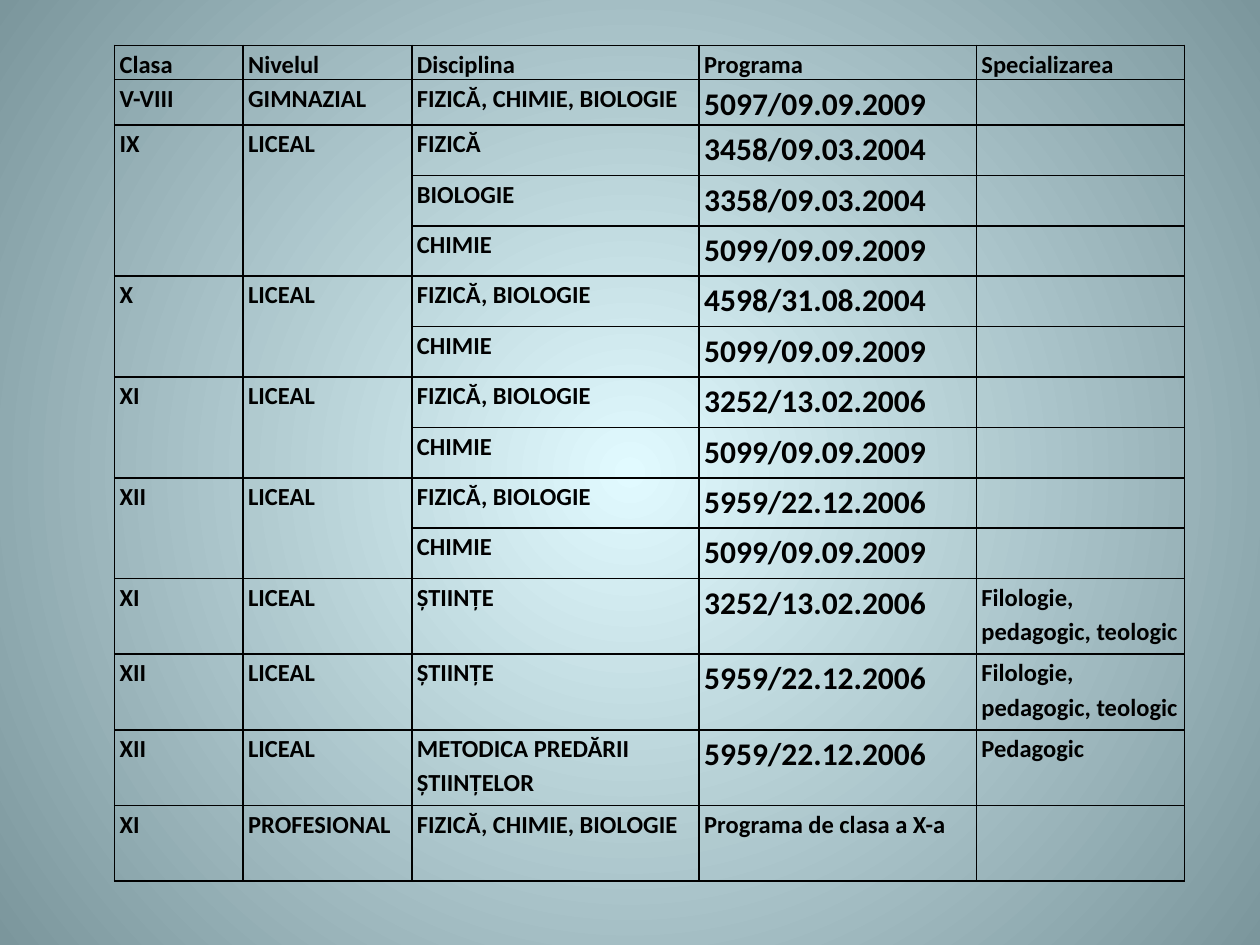
"""Build a slide with the table of science curricula by class and level."""
from lxml.etree import SubElement
from pptx import Presentation
from pptx.dml.color import RGBColor as Color
from pptx.oxml.ns import qn
from pptx.util import Inches, Pt

COLORS = {"center": "E1FAFF", "edge": "7B969C", "ink": "000000"}
COLUMN_WIDTHS = [1.02, 1.34, 2.28, 2.2, 1.65]
ROW_HEIGHTS = [0.21, 0.36] + [0.4] * 9 + [0.6] * 4
ROWS = [
    ("Clasa", "Nivelul", "Disciplina", "Programa", "Specializarea"),
    ("V-VIII", "GIMNAZIAL", "FIZICĂ, CHIMIE, BIOLOGIE", "5097/09.09.2009", ""),
    ("IX", "LICEAL", "FIZICĂ", "3458/09.03.2004", ""),
    ("", "", "BIOLOGIE", "3358/09.03.2004", ""),
    ("", "", "CHIMIE", "5099/09.09.2009", ""),
    ("X", "LICEAL", "FIZICĂ, BIOLOGIE", "4598/31.08.2004", ""),
    ("", "", "CHIMIE", "5099/09.09.2009", ""),
    ("XI", "LICEAL", "FIZICĂ, BIOLOGIE", "3252/13.02.2006", ""),
    ("", "", "CHIMIE", "5099/09.09.2009", ""),
    ("XII", "LICEAL", "FIZICĂ, BIOLOGIE", "5959/22.12.2006", ""),
    ("", "", "CHIMIE", "5099/09.09.2009", ""),
    ("XI", "LICEAL", "ȘTIINȚE", "3252/13.02.2006", "Filologie, pedagogic, teologic"),
    ("XII", "LICEAL", "ȘTIINȚE", "5959/22.12.2006", "Filologie, pedagogic, teologic"),
    ("XII", "LICEAL", "METODICA PREDĂRII ȘTIINȚELOR", "5959/22.12.2006", "Pedagogic"),
    ("XI", "PROFESIONAL", "FIZICĂ, CHIMIE, BIOLOGIE", "Programa de clasa a X-a", ""),
]
MERGED_ROWS = [(2, 4), (5, 6), (7, 8), (9, 10)]


def add_borders(cell):
    properties = cell._tc.get_or_add_tcPr()
    for side in ("lnL", "lnR", "lnT", "lnB"):
        line = SubElement(properties, qn(f"a:{side}"), w=str(Pt(1)))
        fill = SubElement(line, qn("a:solidFill"))
        SubElement(fill, qn("a:srgbClr"), val=COLORS["ink"])


presentation = Presentation()
presentation.slide_width, presentation.slide_height = Inches(10), Inches(7.5)
slide = presentation.slides.add_slide(presentation.slide_layouts[6])

background = slide.background.fill
background.gradient()
for stop, name, position in zip(background.gradient_stops, ("center", "edge"), (0, 1)):
    stop.color.rgb = Color.from_string(COLORS[name])
    stop.position = position
gradient = slide.element.find(".//" + qn("a:gradFill"))
gradient.remove(gradient.find(qn("a:lin")))
circle = SubElement(gradient, qn("a:path"), path="circle")
SubElement(circle, qn("a:fillToRect"), dict.fromkeys("ltrb", "50000"))

table = slide.shapes.add_table(
    len(ROWS), len(COLUMN_WIDTHS), Inches(0.91), Inches(0.36),
    Inches(sum(COLUMN_WIDTHS)), Inches(sum(ROW_HEIGHTS))).table
table.first_row = table.horz_banding = False
for column, width in zip(table.columns, COLUMN_WIDTHS):
    column.width = Inches(width)
for row, height in zip(table.rows, ROW_HEIGHTS):
    row.height = Inches(height)

for row, texts in zip(table.rows, ROWS):
    for cell, text in zip(row.cells, texts):
        add_borders(cell)
        cell.fill.background()
        cell.margin_left = cell.margin_right = Inches(0.04)
        cell.margin_top = cell.margin_bottom = 0
        if text:
            paragraph = cell.text_frame.paragraphs[0]
            paragraph.text = text
            paragraph.line_spacing = 1.15
            font = paragraph.runs[0].font
            font.name, font.bold = "Calibri", True
            font.size = Pt(18 if "/" in text else 14)
            font.color.rgb = Color.from_string(COLORS["ink"])

for first, last in MERGED_ROWS:
    for column in range(2):
        table.cell(first, column).merge(table.cell(last, column))

presentation.save("out.pptx")
